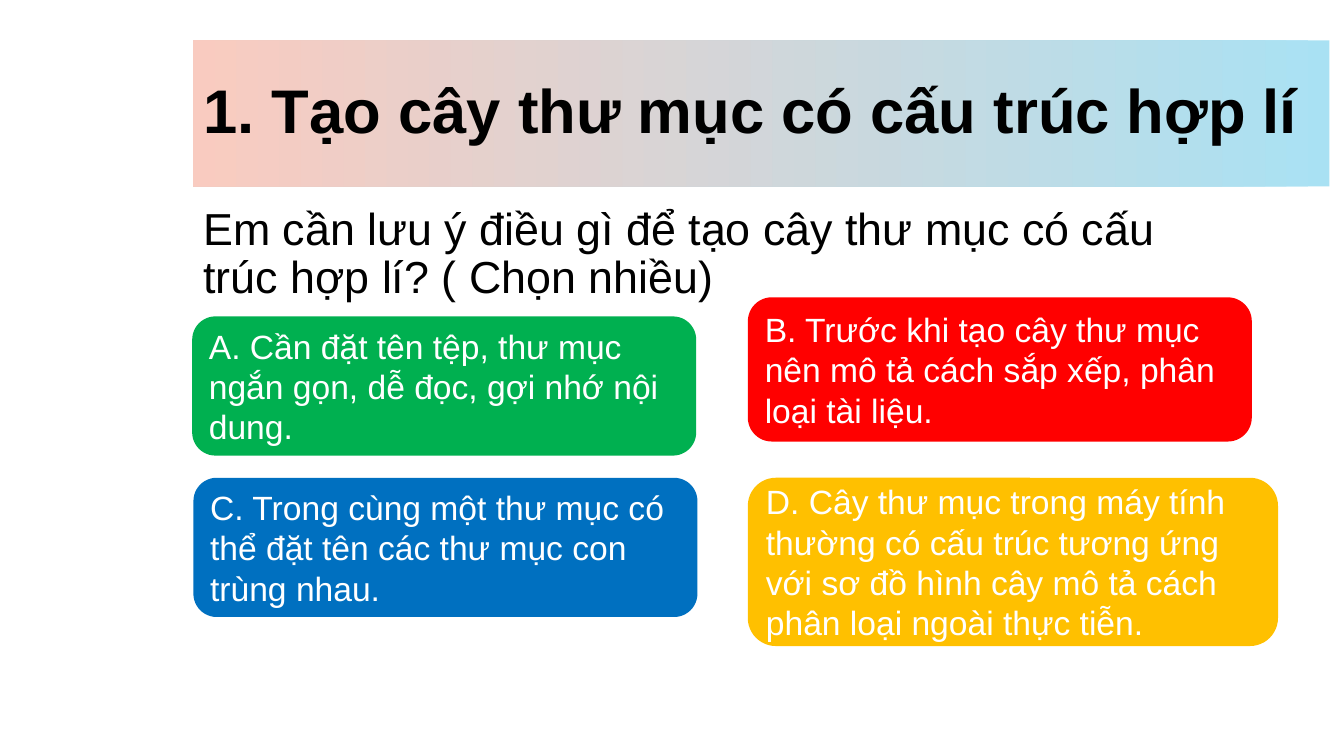
from dataclasses import dataclass
from typing import Any

import lxml.etree
import pptx
import pptx.dml.color
import pptx.enum.shapes
import pptx.enum.text
import pptx.oxml.ns
import pptx.util

Pt = pptx.util.Pt
COLORS = {
    "black": "000000",
    "white": "FFFFFF",
    "sky": "8DD8F0",
    "salmon": "F8BAAB",
    "green": "00B050",
    "red": "FF0000",
    "blue": "0070C0",
    "amber": "FFC000",
}


@dataclass
class Answer:
    """One answer card, measured in points."""

    text: str
    color: str
    left: float
    top: float
    width: float
    height: float


ANSWERS = [
    Answer("A. Cần đặt tên tệp, thư mục ngắn gọn, dễ đọc, gợi nhớ nội dung.",
           "green", 137.3, 226, 360, 99.4),
    Answer("B. Trước khi tạo cây thư mục nên mô tả cách sắp xếp, phân loại tài liệu.",
           "red", 534.2, 212.4, 360, 103),
    Answer("C. Trong cùng một thư mục có thể đặt tên các thư mục con trùng nhau.",
           "blue", 138.2, 341.3, 360, 99.4),
    Answer("D. Cây thư mục trong máy tính thường có cấu trúc tương ứng với sơ đồ "
           "hình cây mô tả cách phân loại ngoài thực tiễn.",
           "amber", 534.2, 341.3, 378.7, 120.2),
]


def rgb(name: str) -> pptx.dml.color.RGBColor:
    """Return a named colour."""
    return pptx.dml.color.RGBColor.from_string(COLORS[name])


def write(sp: Any, text: str, *, size: float, color: str, bold: bool = False,
          spacing: float = 1.0, middle: bool = True) -> None:
    """Put left-aligned, wrapped text into a shape."""
    anchors = pptx.enum.text.MSO_ANCHOR
    tf = sp.text_frame
    tf.word_wrap = True
    tf.auto_size = pptx.enum.text.MSO_AUTO_SIZE.NONE
    tf.vertical_anchor = anchors.MIDDLE if middle else anchors.TOP
    p = tf.paragraphs[0]
    p.alignment = pptx.enum.text.PP_ALIGN.LEFT
    p.line_spacing = spacing
    r = p.add_run()
    r.text = text
    r.font.name = "Arial"
    r.font.size = Pt(size)
    r.font.bold = bold
    r.font.color.rgb = rgb(color)


def add_title(s: Any) -> None:
    """Place the title over a translucent gradient band."""
    sp = s.shapes.title
    sp.left, sp.top, sp.width, sp.height = Pt(138.2), Pt(28.8), Pt(811.4), Pt(104.4)
    sp.fill.gradient()
    sp.fill.gradient_angle = 180
    for stop, color in zip(sp.fill.gradient_stops, ("sky", "salmon")):
        stop.color.rgb = rgb(color)
    qn = pptx.oxml.ns.qn
    for clr in sp.element.spPr.iter(qn("a:srgbClr")):
        lxml.etree.SubElement(clr, qn("a:alpha"), val="75000")
    write(sp, "1. Tạo cây thư mục có cấu trúc hợp lí",
          size=44, color="black", bold=True, spacing=0.9)


def add_question(s: Any) -> None:
    """Place the question below the title."""
    sp = s.shapes.add_textbox(Pt(138.2), Pt(144), Pt(756), Pt(342.7))
    write(sp, "Em cần lưu ý điều gì để tạo cây thư mục có cấu trúc hợp lí? ( Chọn nhiều)",
          size=32, color="black", spacing=0.9, middle=False)


def add_answer(s: Any, answer: Answer) -> None:
    """Draw one rounded answer card."""
    sp = s.shapes.add_shape(
        pptx.enum.shapes.MSO_SHAPE.ROUNDED_RECTANGLE,
        Pt(answer.left), Pt(answer.top), Pt(answer.width), Pt(answer.height))
    sp.shadow.inherit = False
    sp.fill.solid()
    sp.fill.fore_color.rgb = rgb(answer.color)
    sp.line.fill.background()
    write(sp, answer.text, size=24, color="white")


def main() -> None:
    """Build and save the slide."""
    prs = pptx.Presentation()
    prs.slide_width, prs.slide_height = Pt(960), Pt(540)
    s = prs.slides.add_slide(prs.slide_layouts.get_by_name("Title Only"))
    add_title(s)
    add_question(s)
    for answer in ANSWERS:
        add_answer(s, answer)
    prs.save("out.pptx")


if __name__ == "__main__":
    main()
